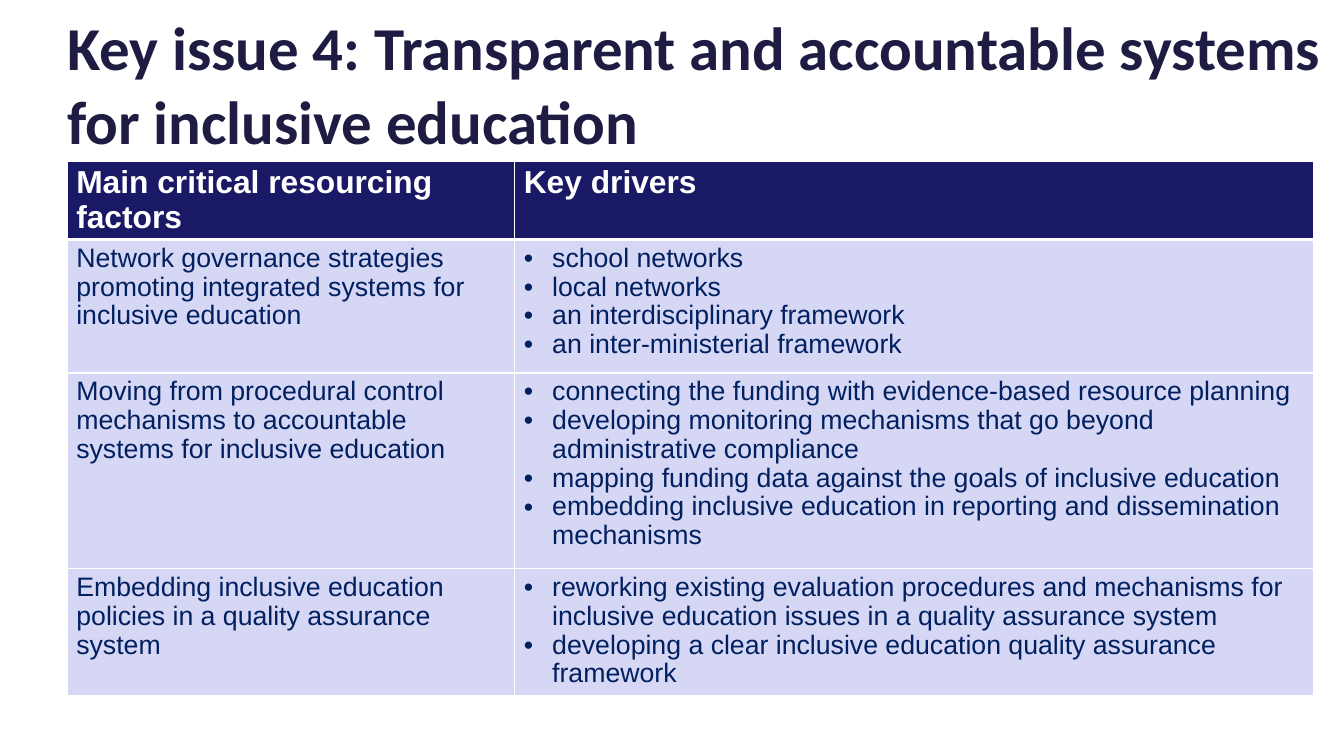
from dataclasses import dataclass

from lxml.etree import SubElement
from pptx import Presentation
from pptx.dml.color import RGBColor
from pptx.enum.text import MSO_ANCHOR, MSO_AUTO_SIZE, PP_ALIGN
from pptx.oxml.ns import qn
from pptx.util import Inches, Length, Pt

WIDTH, HEIGHT = 14.7, 8.27
WHITE = RGBColor(0xFF, 0xFF, 0xFF)
INK = RGBColor(0x1E, 0x1C, 0x43)
NAVY = RGBColor(0x19, 0x19, 0x66)
LAVENDER = RGBColor(0xD6, 0xD6, 0xF5)
BLUE = RGBColor(0x00, 0x20, 0x60)
LEFT = 5
COLUMNS = (33.3, 59.4)
HEADER_ROW = 10.3


@dataclass(frozen=True)
class Factor:
    name: str
    drivers: tuple[str, ...]
    height: float


HEADINGS = ("Main critical resourcing factors", "Key drivers")
FACTORS = (
    Factor(
        "Network governance strategies promoting integrated systems for inclusive education",
        (
            "school networks",
            "local networks",
            "an interdisciplinary framework",
            "an inter-ministerial framework",
        ),
        17.65,
    ),
    Factor(
        "Moving from procedural control mechanisms to accountable systems for inclusive education",
        (
            "connecting the funding with evidence-based resource planning",
            "developing monitoring mechanisms that go beyond administrative compliance",
            "mapping funding data against the goals of inclusive education",
            "embedding inclusive education in reporting and dissemination mechanisms",
        ),
        25.9,
    ),
    Factor(
        "Embedding inclusive education policies in a quality assurance system",
        (
            "reworking existing evaluation procedures and mechanisms for inclusive education"
            " issues in a quality assurance system",
            "developing a clear inclusive education quality assurance framework",
        ),
        16.8,
    ),
)


def across(share: float) -> Length:
    return Inches(WIDTH * share / 100)


def down(share: float) -> Length:
    return Inches(HEIGHT * share / 100)


def add_bullet(p) -> None:
    pPr = p._p.get_or_add_pPr()
    pPr.set("marL", str(Inches(0.31)))
    pPr.set("indent", str(-Inches(0.31)))
    SubElement(pPr, qn("a:buFont"), typeface="Arial")
    SubElement(pPr, qn("a:buChar"), char="•")


def write(tf, lines: tuple[str, ...], *, size: float, color: RGBColor, font: str = "Arial",
          bold: bool = False, bullets: bool = False, spacing: float = 0.97) -> None:
    for i, line in enumerate(lines):
        p = tf.add_paragraph() if i else tf.paragraphs[0]
        p.alignment = PP_ALIGN.LEFT
        p.line_spacing = spacing
        if bullets:
            add_bullet(p)
        r = p.add_run()
        r.text = line
        r.font.name = font
        r.font.size = Pt(size)
        r.font.bold = bold
        r.font.color.rgb = color


def style_cell(cell, fill: RGBColor, top: float, bottom: float) -> None:
    tcPr = cell._tc.get_or_add_tcPr()
    for side, width in (("L", 1), ("R", 1), ("T", top), ("B", bottom)):
        ln = SubElement(tcPr, qn(f"a:ln{side}"), w=str(Pt(width)))
        SubElement(SubElement(ln, qn("a:solidFill")), qn("a:srgbClr"), val=str(WHITE))
    cell.fill.solid()
    cell.fill.fore_color.rgb = fill


def add_title(s, text: str) -> None:
    sp = s.shapes.title
    sp.left, sp.top, sp.width, sp.height = across(LEFT), down(1.5), across(93.6), down(19)
    tf = sp.text_frame
    tf.word_wrap = True
    tf.auto_size = MSO_AUTO_SIZE.NONE
    tf.vertical_anchor = MSO_ANCHOR.MIDDLE
    tf.margin_left = tf.margin_right = tf.margin_top = tf.margin_bottom = 0
    write(tf, (text,), size=48, color=INK, font="Calibri", bold=True, spacing=1.0)


def add_factor_table(s) -> None:
    heights = (HEADER_ROW, *(factor.height for factor in FACTORS))
    table = s.shapes.add_table(
        len(heights), len(COLUMNS), across(LEFT), down(21.4),
        across(sum(COLUMNS)), down(sum(heights)),
    ).table
    table.horz_banding = False
    for column, share in zip(table.columns, COLUMNS):
        column.width = across(share)
    for row, share in zip(table.rows, heights):
        row.height = down(share)
    for cell, heading in zip(table.rows[0].cells, HEADINGS):
        style_cell(cell, NAVY, 1, 3)
        write(cell.text_frame, (heading,), size=25, color=WHITE, bold=True)
    for i, factor in enumerate(FACTORS, start=1):
        for j, lines in enumerate(((factor.name,), factor.drivers)):
            cell = table.cell(i, j)
            style_cell(cell, LAVENDER, 3 if i == 1 else 1, 1)
            write(cell.text_frame, lines, size=21, color=BLUE, bullets=j == 1)


def main() -> None:
    prs = Presentation()
    prs.slide_width, prs.slide_height = Inches(WIDTH), Inches(HEIGHT)
    s = prs.slides.add_slide(prs.slide_layouts[5])
    add_title(s, "Key issue 4: Transparent and accountable systems for inclusive education")
    add_factor_table(s)
    prs.save("out.pptx")


if __name__ == "__main__":
    main()
